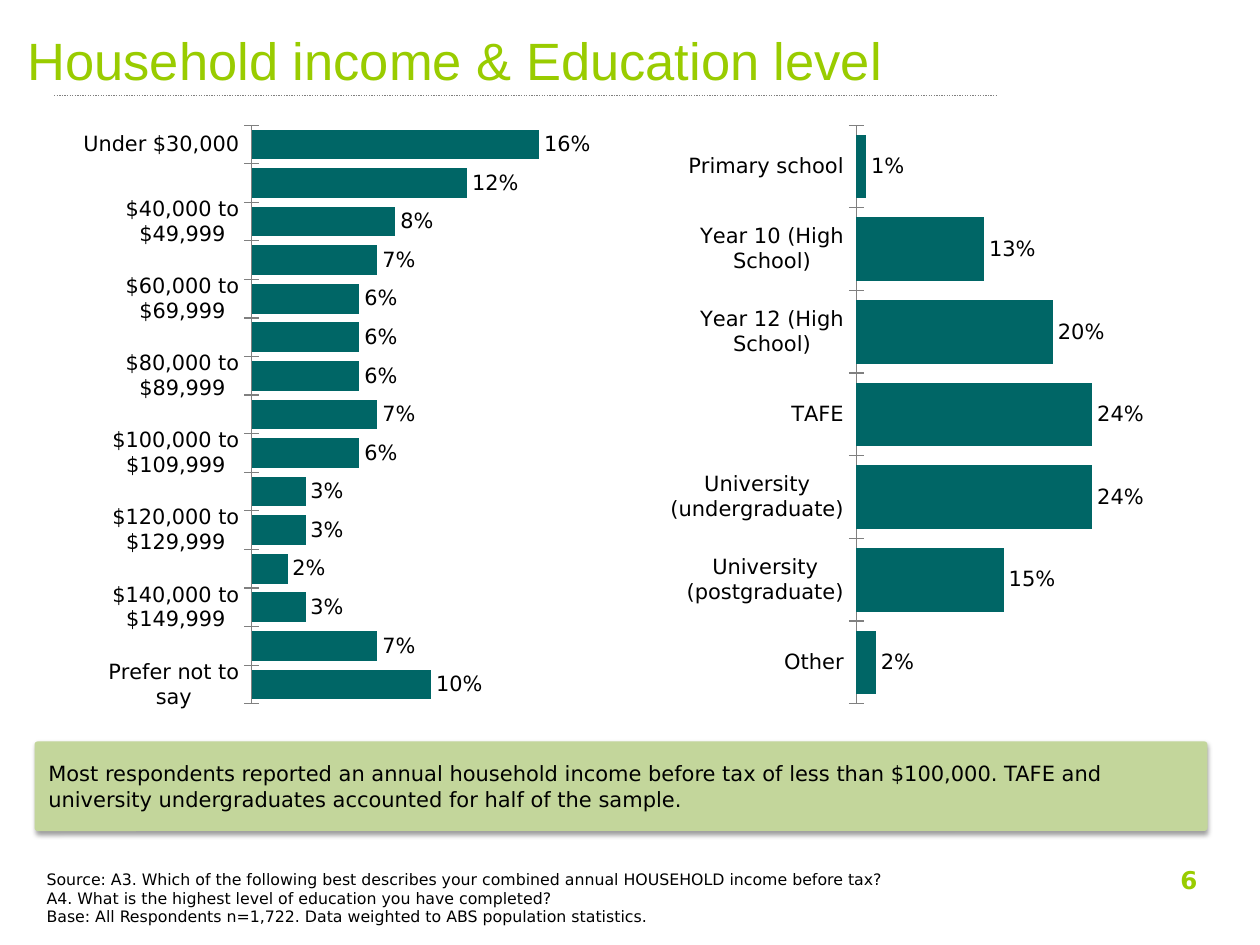
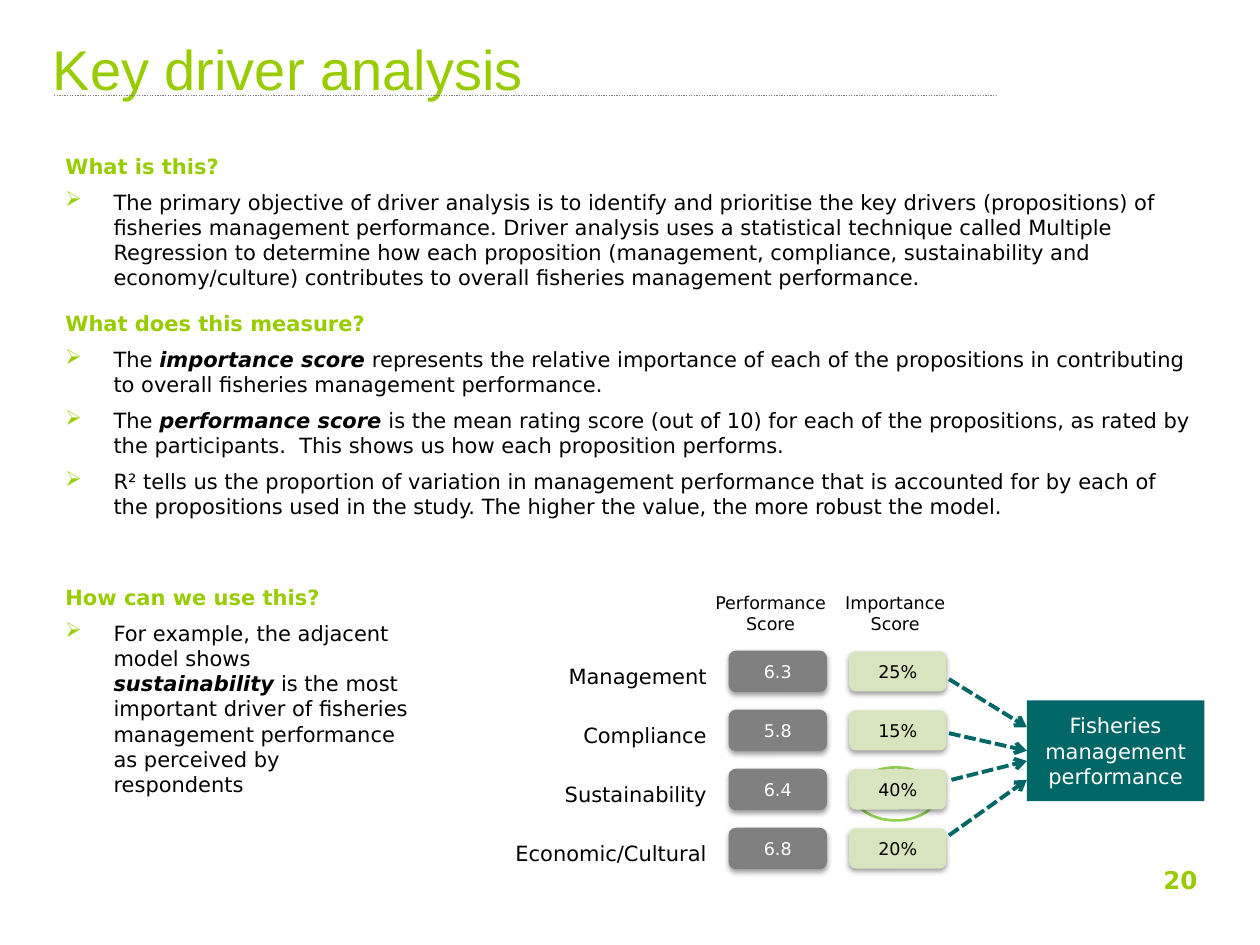
"""Build two survey report slides: respondent profile and key driver analysis."""
from dataclasses import dataclass

import lxml.etree
import pptx
import pptx.chart.data
import pptx.dml.color
import pptx.enum.chart
import pptx.enum.dml
import pptx.enum.shapes
import pptx.enum.text
import pptx.oxml
import pptx.oxml.ns
import pptx.util

Cm = pptx.util.Cm
Pt = pptx.util.Pt
SHAPE = pptx.enum.shapes.MSO_SHAPE
ALIGN = pptx.enum.text.PP_ALIGN
ANCHOR = pptx.enum.text.MSO_ANCHOR
DASH = pptx.enum.dml.MSO_LINE

BODY_FONT, TITLE_FONT = "DejaVu Sans", "Arial"
LIME, TEAL, GREY = "99CC00", "006666", "808080"
SAGE, PALE_SAGE, RING_GREEN = "C3D69B", "D7E4BD", "92D050"
BLACK, WHITE = "000000", "FFFFFF"


@dataclass(frozen=True)
class Box:
    """A rectangle in centimetres."""
    left: float
    top: float
    width: float
    height: float

    def emu(self) -> tuple:
        """Return the four lengths for python-pptx."""
        return Cm(self.left), Cm(self.top), Cm(self.width), Cm(self.height)


@dataclass(frozen=True)
class Style:
    """How the paragraphs of a box look."""
    size: float = 12
    color: str = BLACK
    bold: bool = False
    align: ALIGN = ALIGN.LEFT
    font: str = BODY_FONT


@dataclass(frozen=True)
class Breakdown:
    """One bar chart of respondent shares in percent."""
    box: Box
    plot_left: float
    plot_width: float
    axis_max: float
    shares: dict


@dataclass(frozen=True)
class Topic:
    """A heading with its bullets; asterisks enclose emphasis."""
    heading: str
    bullets: tuple


@dataclass(frozen=True)
class Driver:
    """A proposition, its scores and its arrow to the outcome."""
    name: str
    performance: str
    importance: str
    arrow_left: float
    arrow_top: float
    arrow_end: float


INCOME = Breakdown(Box(1.68, 2.51, 10.31, 12.14), 0.324, 0.673, 0.19, {
    "Under $30,000": 16, "$30,000 to $39,999": 12, "$40,000 to $49,999": 8,
    "$50,000 to $59,999": 7, "$60,000 to $69,999": 6, "$70,000 to $79,999": 6,
    "$80,000 to $89,999": 6, "$90,000 to $99,999": 7, "$100,000 to $109,999": 6,
    "$110,000 to $119,999": 3, "$120,000 to $129,999": 3, "$130,000 to $139,999": 2,
    "$140,000 to $149,999": 3, "$150,000 and over": 7, "Prefer not to say": 10})
EDUCATION = Breakdown(Box(12.9, 2.51, 10.31, 12.14), 0.423, 0.577, 0.3, {
    "Primary school": 1, "Year 10 (High School)": 13, "Year 12 (High School)": 20,
    "TAFE": 24, "University (undergraduate)": 24, "University (postgraduate)": 15,
    "Other": 2})

EXPLANATION = (
    Topic("What is this?", (
        "The primary objective of driver analysis is to identify and prioritise the key "
        "drivers (propositions) of fisheries management performance. Driver analysis uses "
        "a statistical technique called Multiple Regression to determine how each "
        "proposition (management, compliance, sustainability and economy/culture) "
        "contributes to overall fisheries management performance.",)),
    Topic("What does this measure?", (
        "The *importance score* represents the relative importance of each of the "
        "propositions in contributing to overall fisheries management performance.",
        "The *performance score* is the mean rating score (out of 10) for each of the "
        "propositions, as rated by the participants.  This shows us how each proposition "
        "performs.",
        "R² tells us the proportion of variation in management performance that is "
        "accounted for by each of the propositions used in the study. The higher the "
        "value, the more robust the model.")))
USAGE = (Topic("How can we use this?", (
    "For example, the adjacent model shows *sustainability* is the most important driver "
    "of fisheries management performance as perceived by respondents",)),)

DRIVERS = (
    Driver("Management", "6.3", "25%", 19.13, 13.69, 14.66),
    Driver("Compliance", "5.8", "15%", 19.13, 14.78, 15.14),
    Driver("Sustainability", "6.4", "40%", 19.18, 15.72, 15.34),
    Driver("Economic/Cultural", "6.8", "20%", 19.13, 16.84, 15.72))
DRIVER_TOP, DRIVER_PITCH = 13.13, 1.19
PERFORMANCE_LEFT, IMPORTANCE_LEFT = 14.7, 17.12
OUTCOME = Box(20.7, 14.12, 3.58, 2.03)


def rgb(color: str) -> pptx.dml.color.RGBColor:
    """Turn a hex string into a colour."""
    return pptx.dml.color.RGBColor.from_string(color)


def format_font(font, style: Style) -> None:
    """Apply a style to any font object."""
    font.name, font.size, font.bold = style.font, Pt(style.size), style.bold
    font.color.rgb = rgb(style.color)


def fill_frame(frame, lines: tuple, style: Style, anchor=ANCHOR.TOP) -> None:
    """Write equally styled paragraphs into a text frame."""
    frame.word_wrap, frame.vertical_anchor = True, anchor
    for index, line in enumerate(lines):
        paragraph = frame.add_paragraph() if index else frame.paragraphs[0]
        paragraph.text, paragraph.alignment = line, style.align
        format_font(paragraph.font, style)


def add_text(slide, box: Box, lines: tuple, style: Style, anchor=ANCHOR.TOP) -> None:
    """Add a text box."""
    fill_frame(slide.shapes.add_textbox(*box.emu()).text_frame, lines, style, anchor)


def add_panel(slide, kind, box: Box, fill: str = "", line: str = "",
              line_width: float = 0.75, shadow: bool = False):
    """Add a preset shape with optional fill, outline and soft shadow."""
    panel = slide.shapes.add_shape(kind, *box.emu())
    panel.shadow.inherit = False
    if fill:
        panel.fill.solid()
        panel.fill.fore_color.rgb = rgb(fill)
    else:
        panel.fill.background()
    if line:
        panel.line.color.rgb = rgb(line)
        panel.line.width = Pt(line_width)
    else:
        panel.line.fill.background()
    if shadow:
        effects = panel._element.spPr.find(pptx.oxml.ns.qn("a:effectLst"))
        effects.append(pptx.oxml.parse_xml(
            f'<a:outerShdw {pptx.oxml.ns.nsdecls("a")} blurRad="{Pt(3.1)}" '
            f'dist="{Pt(1.6)}" dir="5400000" rotWithShape="0">'
            '<a:srgbClr val="000000"><a:alpha val="38000"/></a:srgbClr></a:outerShdw>'))
    return panel


def add_line(slide, start: tuple, end: tuple, color: str, width: float, dash):
    """Add a straight dashed connector without shadow."""
    points = [Cm(value) for value in (*start, *end)]
    line = slide.shapes.add_connector(pptx.enum.shapes.MSO_CONNECTOR.STRAIGHT, *points)
    line.line.color.rgb = rgb(color)
    line.line.width = Pt(width)
    line.line.dash_style = dash
    lxml.etree.SubElement(line._element.spPr, pptx.oxml.ns.qn("a:effectLst"))
    return line


def add_slide(deck, title: str, title_box: Box, title_size: float, page: str):
    """Add a slide with title, dotted rule and page number."""
    slide = deck.slides.add_slide(deck.slide_layouts[5])
    heading = slide.shapes.title
    heading.left, heading.top, heading.width, heading.height = title_box.emu()
    heading.text_frame.auto_size = pptx.enum.text.MSO_AUTO_SIZE.NONE
    fill_frame(heading.text_frame, (title,), Style(title_size, LIME, font=TITLE_FONT),
               ANCHOR.MIDDLE)
    add_line(slide, (1.09, 1.93), (20.09, 1.93), GREY, 0.75, DASH.ROUND_DOT)
    add_text(slide, Box(18.47, 17.32, 5.92, 1.32), (page,),
             Style(14, LIME, True, ALIGN.RIGHT))
    return slide


def add_breakdown(slide, breakdown: Breakdown) -> None:
    """Add a horizontal bar chart of shares."""
    data = pptx.chart.data.CategoryChartData(number_format="0%")
    data.categories = list(breakdown.shares)
    data.add_series("Series 1", [share / 100 for share in breakdown.shares.values()])
    chart = slide.shapes.add_chart(pptx.enum.chart.XL_CHART_TYPE.BAR_CLUSTERED,
                                   *breakdown.box.emu(), data).chart
    chart.has_legend = chart.has_title = False
    format_font(chart.font, Style(18))
    categories, values = chart.category_axis, chart.value_axis
    categories.reverse_order = True
    categories.major_tick_mark = pptx.enum.chart.XL_TICK_MARK.CROSS
    categories.format.line.color.rgb = rgb(GREY)
    format_font(categories.tick_labels.font, Style())
    values.visible = values.has_major_gridlines = False
    values.minimum_scale, values.maximum_scale = 0, breakdown.axis_max
    plot = chart.plots[0]
    plot.gap_width, plot.vary_by_categories = 30, False
    bars = plot.series[0].format.fill
    bars.solid()
    bars.fore_color.rgb = rgb(TEAL)
    plot.has_data_labels = True
    labels = plot.data_labels
    labels.show_value = True
    labels.number_format, labels.number_format_is_linked = "0%", False
    labels.position = pptx.enum.chart.XL_LABEL_POSITION.OUTSIDE_END
    format_font(labels.font, Style())
    place_plot(chart, breakdown)


def place_plot(chart, breakdown: Breakdown) -> None:
    """Fix the inner plot area as fractions of the chart."""
    area = chart._chartSpace.chart.plotArea
    for layout in area.findall(pptx.oxml.ns.qn("c:layout")):
        area.remove(layout)
    fractions = {"x": breakdown.plot_left, "y": 0, "w": breakdown.plot_width, "h": 0.962}
    modes = '<c:layoutTarget val="inner"/><c:xMode val="edge"/><c:yMode val="edge"/>'
    sizes = "".join(f'<c:{name} val="{value}"/>' for name, value in fractions.items())
    area.insert(0, pptx.oxml.parse_xml(
        f'<c:layout {pptx.oxml.ns.nsdecls("c")}><c:manualLayout>{modes}{sizes}'
        '</c:manualLayout></c:layout>'))


def add_topics(slide, box: Box, topics: tuple) -> None:
    """Add headings with arrow bullets beneath them."""
    frame = slide.shapes.add_textbox(*box.emu()).text_frame
    frame.word_wrap = True
    entries = [(text, text == topic.heading)
               for topic in topics for text in (topic.heading, *topic.bullets)]
    for index, (text, is_heading) in enumerate(entries):
        paragraph = frame.add_paragraph() if index else frame.paragraphs[0]
        properties = paragraph._p.get_or_add_pPr()
        properties.set("marL", str(Cm(0.97)))
        properties.set("indent", str(-Cm(0.97)))
        if not is_heading:
            color = lxml.etree.SubElement(properties, pptx.oxml.ns.qn("a:buClr"))
            lxml.etree.SubElement(color, pptx.oxml.ns.qn("a:srgbClr"), val=LIME)
            lxml.etree.SubElement(properties, pptx.oxml.ns.qn("a:buChar"), char="➢")
        if index:
            paragraph.space_before = Pt(12 if is_heading else 6)
        format_font(paragraph.font, Style(color=LIME if is_heading else BLACK,
                                          bold=is_heading))
        for part, words in enumerate(text.split("*")):
            run = paragraph.add_run()
            run.text = words
            if part % 2:
                run.font.bold = run.font.italic = True


def add_driver_model(slide) -> None:
    """Draw the scores of each driver and their arrows to the outcome."""
    centred = Style(10, align=ALIGN.CENTER)
    for left, measure in ((12.5, "Performance"), (15.01, "Importance")):
        add_text(slide, Box(left, 11.81, 6.07, 1.22), (measure, "Score"), centred)
    outcome = add_panel(slide, SHAPE.RECTANGLE, OUTCOME, TEAL)
    fill_frame(outcome.text_frame, ("Fisheries management performance",),
               Style(12, WHITE, align=ALIGN.CENTER), ANCHOR.MIDDLE)
    add_panel(slide, SHAPE.OVAL, Box(17.22, 15.47, 1.68, 1.07), line=RING_GREEN,
              line_width=1.5)
    for row, driver in enumerate(DRIVERS):
        top = DRIVER_TOP + row * DRIVER_PITCH
        add_text(slide, Box(9.5, top + 0.2, 5, 0.61), (driver.name,),
                 Style(align=ALIGN.RIGHT), ANCHOR.MIDDLE)
        for left, score, fill, line, color in (
                (PERFORMANCE_LEFT, driver.performance, GREY, GREY, WHITE),
                (IMPORTANCE_LEFT, driver.importance, PALE_SAGE, "", BLACK)):
            tile = add_panel(slide, SHAPE.ROUNDED_RECTANGLE, Box(left, top, 1.96, 0.81),
                             fill, line, shadow=True)
            fill_frame(tile.text_frame, (score,), Style(10, color, align=ALIGN.CENTER),
                       ANCHOR.MIDDLE)
        arrow = add_line(slide, (driver.arrow_left, driver.arrow_top),
                         (OUTCOME.left, driver.arrow_end), TEAL, 2.25, DASH.SQUARE_DOT)
        lxml.etree.SubElement(arrow.line._get_or_add_ln(), pptx.oxml.ns.qn("a:tailEnd"),
                              type="arrow")
        if abs(driver.arrow_end - OUTCOME.top - OUTCOME.height / 2) < 0.02:
            arrow.end_connect(outcome, 1)


def main() -> None:
    """Build and save the deck."""
    deck = pptx.Presentation()
    deck.slide_width, deck.slide_height = Cm(25.4), Cm(19.05)

    profile = add_slide(deck, "Household income & Education level",
                        Box(0.3, 0.33, 20.02, 1.75), 30, "6")
    for breakdown in (EDUCATION, INCOME):
        add_breakdown(profile, breakdown)
    finding = add_panel(profile, SHAPE.ROUNDED_RECTANGLE, Box(0.71, 14.96, 23.62, 1.78),
                        SAGE, SAGE, shadow=True)
    finding.adjustments[0] = 0.03
    fill_frame(finding.text_frame, (
        "Most respondents reported an annual household income before tax of less than "
        "$100,000. TAFE and university undergraduates accounted for half of the sample.",),
        Style(), ANCHOR.MIDDLE)
    add_text(profile, Box(0.69, 17.4, 21.03, 1.52), (
        "Source: A3. Which of the following best describes your combined annual HOUSEHOLD "
        "income before tax?",
        "A4. What is the highest level of education you have completed?",
        "Base: All Respondents n=1,722. Data weighted to ABS population statistics."),
        Style(9))

    analysis = add_slide(deck, "Key driver analysis", Box(0.81, 0.23, 18.64, 2.29), 32, "20")
    add_topics(analysis, Box(1.07, 2.97, 23.24, 10.16), EXPLANATION)
    add_topics(analysis, Box(1.07, 11.66, 7.44, 6.48), USAGE)
    add_driver_model(analysis)
    deck.save("out.pptx")


if __name__ == "__main__":
    main()
